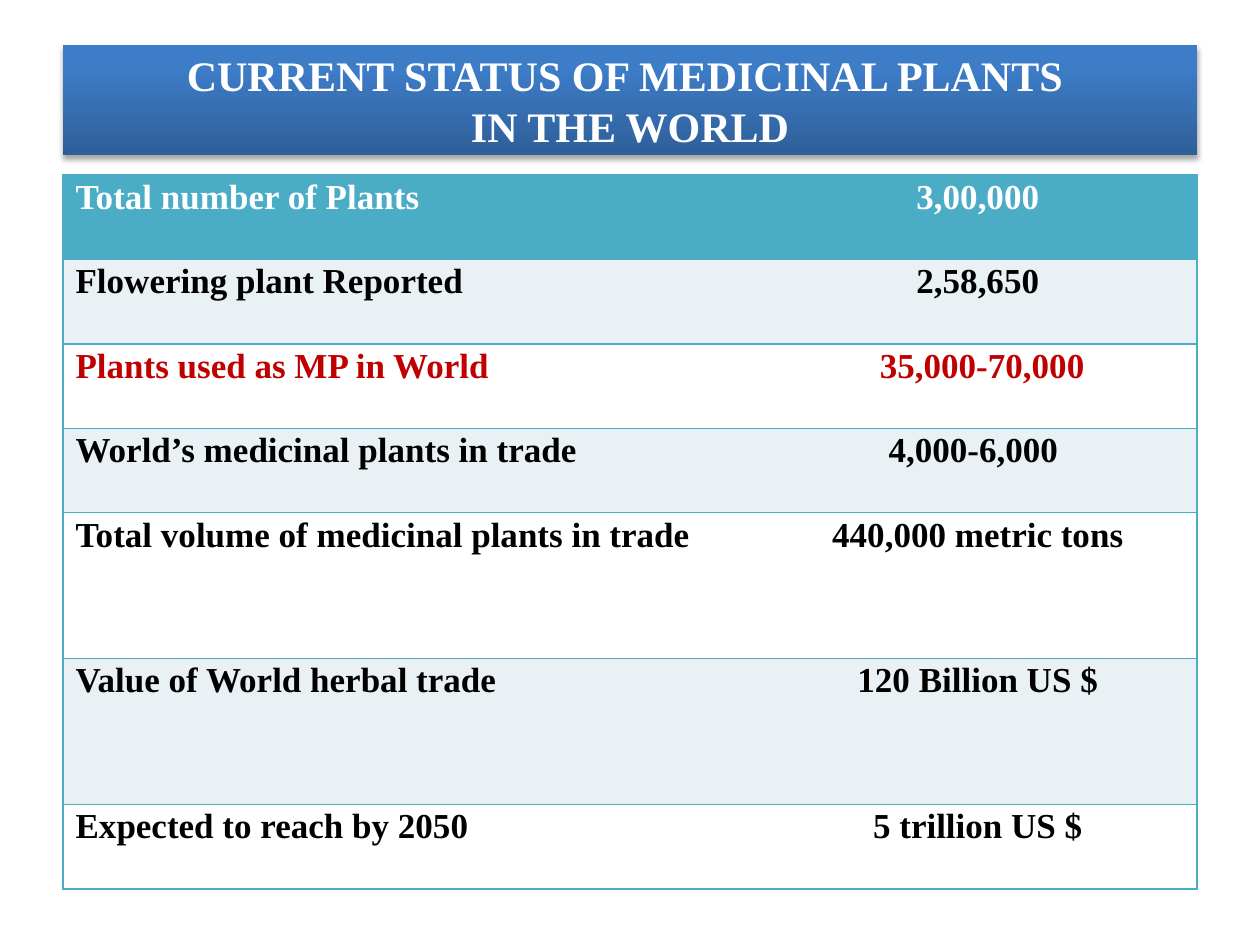
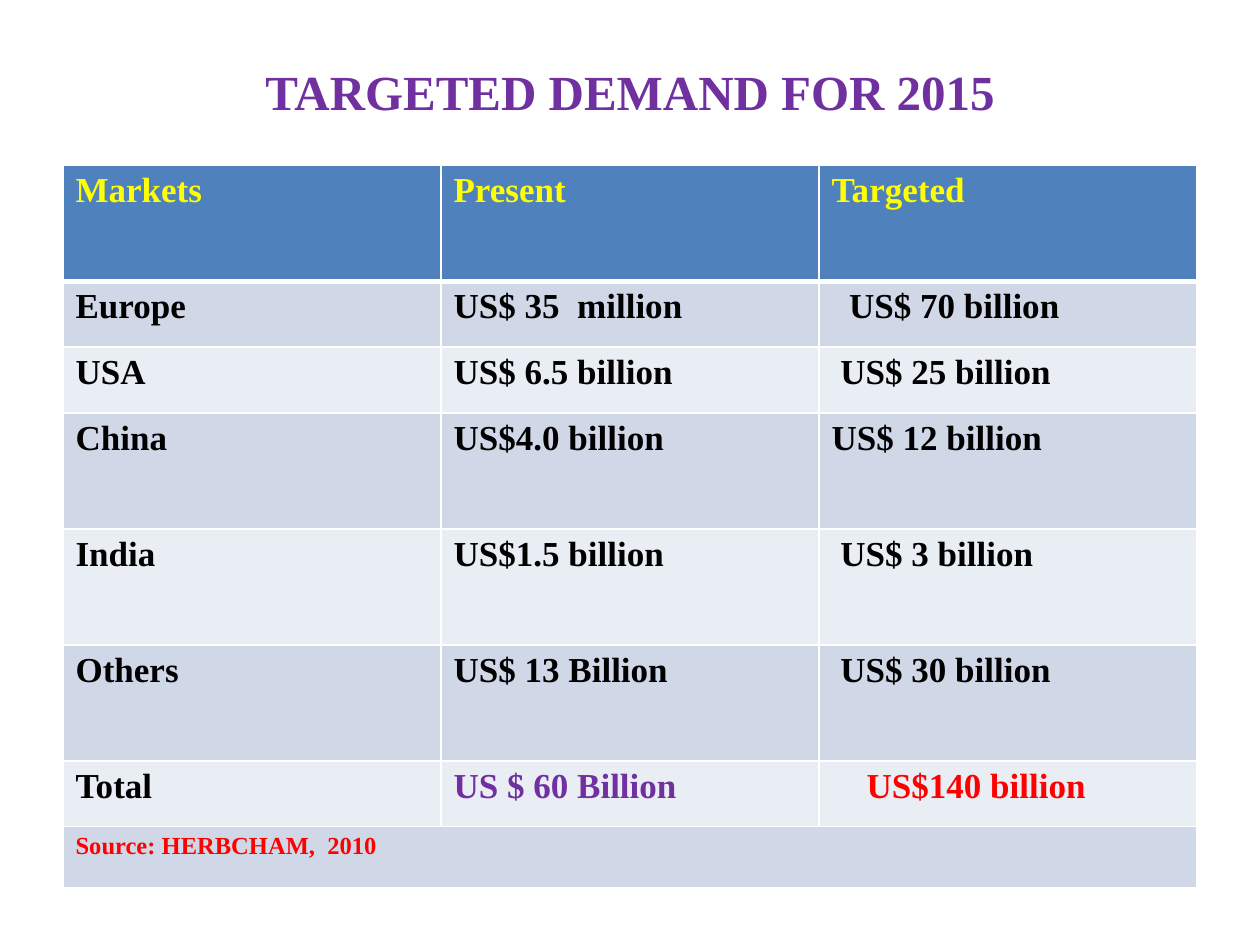
from lxml import etree
from pptx import Presentation
from pptx.dml.color import RGBColor
from pptx.enum import text
from pptx.oxml import parse_xml
from pptx.oxml.ns import nsdecls, qn
from pptx.util import Pt

FONT = "Times New Roman"
LEFT, WIDTH = 36, 648
SPACE = 5  # width of one space in the table text
BLACK, WHITE, RED, PURPLE, TEAL = "000000", "FFFFFF", "FF0000", "7030A0", "4BACC6"


def color(code):
    return RGBColor.from_string(code)


def write(para, words, size, code):
    span = para.add_run()
    span.text = words
    span.font.name = FONT
    span.font.size = Pt(size)
    span.font.bold = True
    span.font.color.rgb = color(code)


# Content: special maps (row, column) to a text colour,
# indents maps (row, column) to a number of spaces
status = {
    "title": ["CURRENT STATUS OF MEDICINAL PLANTS ", "IN THE WORLD"],
    "title_style": (26, 62.6, 24, WHITE),
    "top": 100, "columns": [397.5, 250.5],
    "heights": [48.25, 48.25, 48.25, 48.25, 83.4, 83.4, 48.25],
    "rows": [
        ["Total number of Plants", "3,00,000"],
        ["Flowering plant Reported", "2,58,650"],
        ["Plants used as MP in World", " 35,000-70,000"],
        ["World’s medicinal plants in trade", "4,000-6,000 "],
        ["Total volume of medicinal plants in trade", "440,000 metric tons"],
        ["Value of World herbal trade", "120 Billion US $"],
        ["Expected to reach by 2050", "5 trillion US $"],
    ],
    "header": (TEAL, WHITE), "bands": ["FFFFFF", "E9F1F5"],
    "special": {(2, 0): "C00000", (2, 1): "C00000"}, "indents": {},
    "line": TEAL, "grid": False,
}
demand = {
    "title": ["TARGETED DEMAND FOR 2015"],
    "title_style": (21.6, 61.2, 28, PURPLE),
    "top": 94.5, "columns": [216, 216, 216],
    "heights": [66.3, 37.6, 37.6, 66.3, 66.3, 66.3, 37.6, 35],
    "rows": [
        ["Markets", "Present", "Targeted"],
        ["Europe", "US$ 35  million", "US$ 70 billion"],
        ["USA", "US$ 6.5 billion", "US$ 25 billion"],
        ["China", "US$4.0 billion", "US$ 12 billion"],
        ["India", "US$1.5 billion", "US$ 3 billion"],
        ["Others", "US$ 13 Billion", "US$ 30 billion"],
        ["Total", "US $ 60 Billion", "US$140 billion"],
        ["Source: HERBCHAM,  2010", "", ""],
    ],
    "header": ("4F81BD", "FFFF00"), "bands": ["E9EDF4", "D0D8E8"],
    "special": {(6, 1): PURPLE, (6, 2): RED, (7, 0): RED},
    "indents": {(1, 2): 2, (2, 2): 1, (4, 2): 1, (5, 2): 1, (6, 2): 4},
    "line": WHITE, "grid": True,
}

deck = Presentation()
deck.slide_width, deck.slide_height = Pt(720), Pt(540)

for content in (status, demand):
    page = deck.slides.add_slide(deck.slide_layouts[5])

    # Title
    title = page.shapes.title
    top, height, size, code = content["title_style"]
    title.left, title.top = Pt(LEFT), Pt(top)
    title.width, title.height = Pt(WIDTH), Pt(height)
    frame = title.text_frame
    frame.auto_size = text.MSO_AUTO_SIZE.NONE
    frame.vertical_anchor = text.MSO_ANCHOR.MIDDLE
    para = frame.paragraphs[0]
    para.alignment = text.PP_ALIGN.CENTER
    for number, words in enumerate(content["title"]):
        if number:
            para.add_line_break()
        write(para, words, size, code)

    # Gradient band with a soft shadow behind the first title
    if content is status:
        title.fill.gradient()
        title.fill.gradient_angle = 90
        stops = title.fill.gradient_stops
        for stop, position, code in zip(stops, (0, 0.8), ("2F5F99", "3D7CC7")):
            stop.position = position
            stop.color.rgb = color(code)
        title._element.spPr.append(parse_xml(
            f'<a:effectLst {nsdecls("a")}><a:outerShdw blurRad="39370" dist="22860" '
            'dir="5400000" rotWithShape="0"><a:srgbClr val="000000">'
            '<a:alpha val="35000"/></a:srgbClr></a:outerShdw></a:effectLst>'))

    # Table frame
    rows, columns = content["rows"], content["columns"]
    table = page.shapes.add_table(
        len(rows), len(columns), Pt(LEFT), Pt(content["top"]),
        Pt(WIDTH), Pt(sum(content["heights"]))).table
    table.first_row = table.horz_banding = False
    for column, width in zip(table.columns, columns):
        column.width = Pt(width)
    for row, height in zip(table.rows, content["heights"]):
        row.height = Pt(height)
    if content is demand:
        table.cell(7, 0).merge(table.cell(7, 2))

    # Cells
    for r, row in enumerate(rows):
        for c, words in enumerate(row):
            cell = table.cell(r, c)

            # Borders: the open table has no line between its columns
            props = cell._tc.get_or_add_tcPr()
            inner = {"lnL": c > 0, "lnR": c < len(columns) - 1}
            for side in ("lnL", "lnR", "lnT", "lnB"):
                heavy = content["grid"] and (r, side) in ((0, "lnB"), (1, "lnT"))
                line = etree.SubElement(props, qn(f"a:{side}"), w=str(Pt(3 if heavy else 1)))
                if inner.get(side) and not content["grid"]:
                    etree.SubElement(line, qn("a:noFill"))
                else:
                    paint = etree.SubElement(line, qn("a:solidFill"))
                    etree.SubElement(paint, qn("a:srgbClr"), val=content["line"])

            # Fill and text
            fill, code = content["header"] if r == 0 else (content["bands"][r % 2], BLACK)
            cell.fill.solid()
            cell.fill.fore_color.rgb = color(fill)
            if not words:
                continue
            cell.margin_left = Pt(7.2 + SPACE * content["indents"].get((r, c), 0))
            para = cell.text_frame.paragraphs[0]
            if content is status:
                para.line_spacing = 0.9
                para.space_before = Pt(4)
                if c == 1:
                    para.alignment = text.PP_ALIGN.CENTER
            write(para, words, 14 if words.startswith("Source") else 20,
                  content["special"].get((r, c), code))

deck.save("out.pptx")
